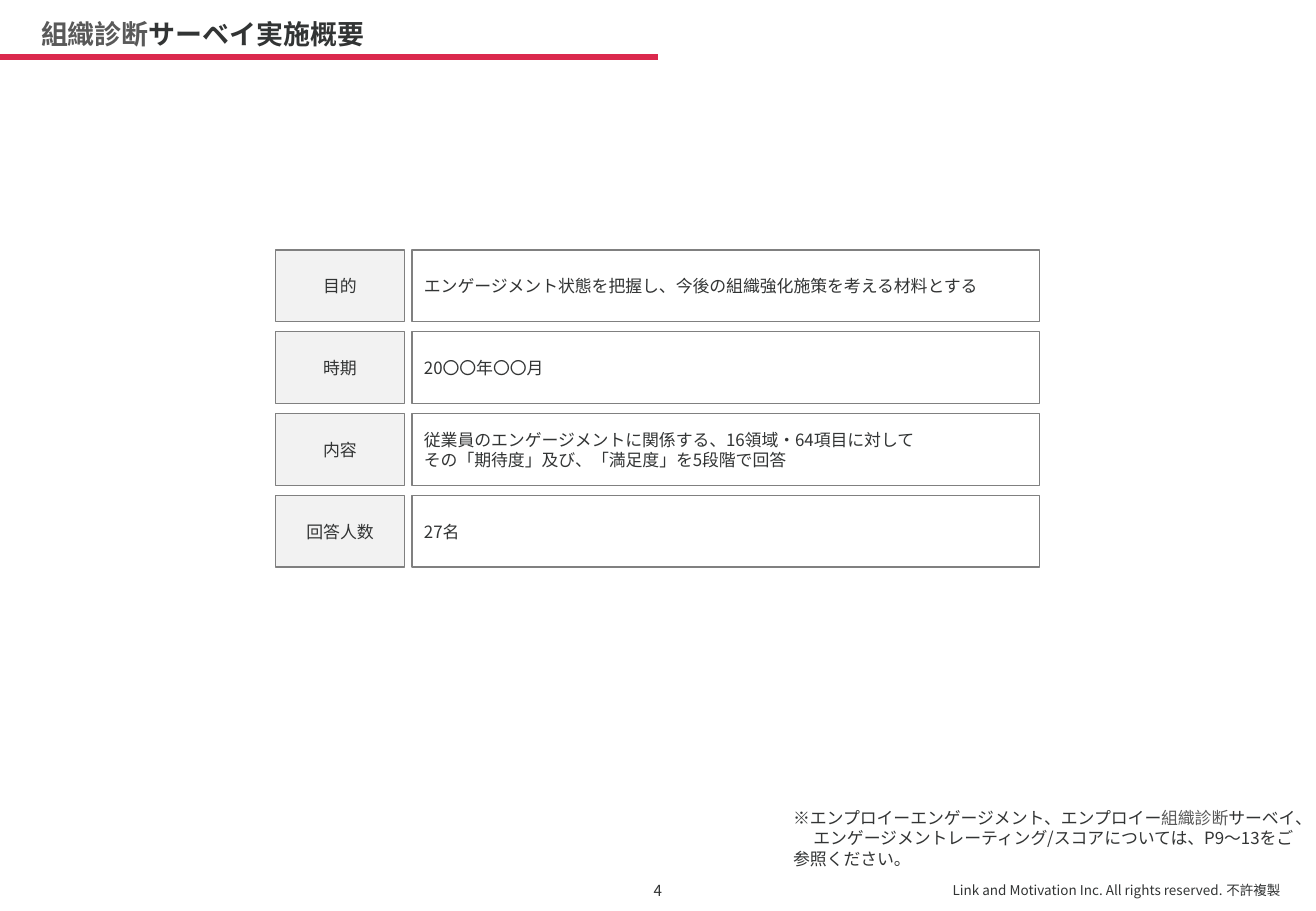
from lxml.etree import SubElement
from pptx import Presentation
from pptx.dml.color import RGBColor
from pptx.enum.shapes import MSO_CONNECTOR, MSO_SHAPE
from pptx.enum.text import MSO_ANCHOR, PP_ALIGN
from pptx.oxml.ns import qn
from pptx.util import Pt

# Content: each text is a list of lines, each line a list of (words, colour)
FONT = "Noto Sans CJK JP"
INK, GREY, RED = "323434", "595959", "DB294D"
BORDER, LABEL_FILL, WHITE = "808080", "F2F2F2", "FFFFFF"

TITLE = [[("組織診断", GREY), ("サーベイ実施概要", INK)]]
OVERVIEW = [
    ("目的", ["エンゲージメント状態を把握し、今後の組織強化施策を考える材料とする"]),
    ("時期", ["20〇〇年〇〇月"]),
    ("内容", ["従業員のエンゲージメントに関係する、16領域・64項目に対して",
            "その「期待度」及び、「満足度」を5段階で回答"]),
    ("回答人数", ["27名"]),
]
NOTE = [
    [("※エンプロイーエンゲージメント、エンプロイー", INK), ("組織診断", GREY), ("サーベイ、", INK)],
    [("エンゲージメントレーティング/スコアについては、P9〜13をご参照ください。", INK)],
]
PAGE_NUMBER = [[("4", INK)]]
COPYRIGHT = [[("Link and Motivation Inc. All rights reserved. 不許複製", INK)]]

# Layout, in points
ROW_TOP, ROW_HEIGHT, ROW_PITCH = 148.2, 42.5, 48.5
LABEL_LEFT, LABEL_WIDTH = 163.4, 76.3
DETAIL_LEFT, DETAIL_WIDTH = 244.2, 372.2
NOTE_INDENT = 12


def colour(hex_code):
    return RGBColor.from_string(hex_code)


def write(frame, lines, size, align=PP_ALIGN.LEFT, anchor=MSO_ANCHOR.TOP, bold=False):
    frame.word_wrap = True
    frame.vertical_anchor = anchor
    for index, line in enumerate(lines):
        paragraph = frame.paragraphs[0] if index == 0 else frame.add_paragraph()
        paragraph.alignment = align
        for words, ink in line:
            run = paragraph.add_run()
            run.text = words
            run.font.size = Pt(size)
            run.font.bold = bold
            run.font.name = FONT
            run.font.color.rgb = colour(ink)
            SubElement(run.font._element, qn("a:ea"), typeface=FONT)


def add_text(left, top, width, height, lines, size, **style):
    box = slide.shapes.add_textbox(Pt(left), Pt(top), Pt(width), Pt(height))
    write(box.text_frame, lines, size, **style)
    return box.text_frame


def add_cell(left, top, width, fill, lines, align):
    cell = slide.shapes.add_shape(
        MSO_SHAPE.RECTANGLE, Pt(left), Pt(top), Pt(width), Pt(ROW_HEIGHT))
    cell.shadow.inherit = False
    cell.fill.solid()
    cell.fill.fore_color.rgb = colour(fill)
    cell.line.color.rgb = colour(BORDER)
    cell.line.width = Pt(0.75)
    write(cell.text_frame, [[(line, INK)] for line in lines], 10,
          align=align, anchor=MSO_ANCHOR.MIDDLE)


presentation = Presentation()
presentation.slide_width, presentation.slide_height = Pt(780), Pt(540)
slide = presentation.slides.add_slide(presentation.slide_layouts[6])

# Title and its rule
rule = slide.shapes.add_connector(
    MSO_CONNECTOR.STRAIGHT, Pt(-63.4), Pt(33.8), Pt(390.2), Pt(33.8))
rule.line.color.rgb = colour(RED)
rule.line.width = Pt(3)
SubElement(rule._element.spPr, qn("a:effectLst"))
title = add_text(17.3, -12.2, 530.6, 45.4, TITLE, 16, anchor=MSO_ANCHOR.BOTTOM, bold=True)
title.paragraphs[0].line_spacing = 0.9

# Overview rows
for row, (label, details) in enumerate(OVERVIEW):
    top = ROW_TOP + row * ROW_PITCH
    add_cell(LABEL_LEFT, top, LABEL_WIDTH, LABEL_FILL, [label], PP_ALIGN.CENTER)
    add_cell(DETAIL_LEFT, top, DETAIL_WIDTH, WHITE, details, PP_ALIGN.LEFT)

# Note with an indented second line
note = add_text(463, 475.2, 313.9, 31.7, NOTE, 10)
note.paragraphs[1]._p.get_or_add_pPr().set("indent", str(Pt(NOTE_INDENT)))

# Footer
add_text(372.2, 512.6, 35.3, 30.2, PAGE_NUMBER, 9,
         align=PP_ALIGN.CENTER, anchor=MSO_ANCHOR.MIDDLE)
add_text(553, 519.1, 213.1, 17.3, COPYRIGHT, 8, align=PP_ALIGN.RIGHT)

presentation.save("out.pptx")
